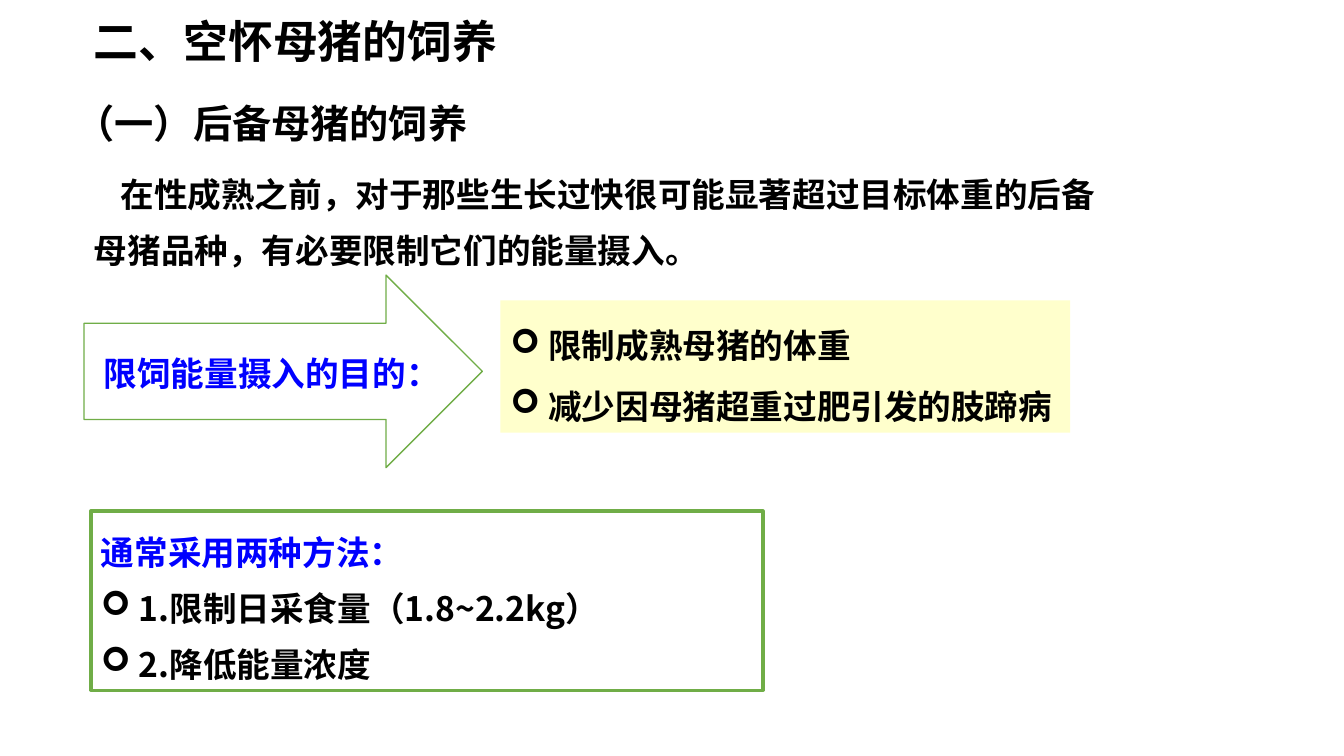
from lxml import etree
from pptx import Presentation
from pptx.dml.color import RGBColor
from pptx.enum.shapes import MSO_SHAPE
from pptx.enum.text import MSO_ANCHOR, MSO_AUTO_SIZE, PP_ALIGN
from pptx.oxml.ns import qn
from pptx.util import Pt

RECTANGLE, RIGHT_ARROW = MSO_SHAPE.RECTANGLE, MSO_SHAPE.RIGHT_ARROW
TOP, LEFT = MSO_ANCHOR.TOP, PP_ALIGN.LEFT
GROW = MSO_AUTO_SIZE.SHAPE_TO_FIT_TEXT

FONT = "Noto Sans CJK SC"
BLACK, BLUE, WHITE = "000000", "0000FF", "FFFFFF"
GREEN, CREAM = "70AD47", "FFFFCC"
BULLET_INDENT = 27


def color(hex_string):
    return RGBColor.from_string(hex_string)


def add_panel(slide, box, fill=WHITE, line=None, line_width=1, preset=RECTANGLE):
    panel = slide.shapes.add_shape(preset, *map(Pt, box))
    panel.shadow.inherit = False
    panel.fill.solid()
    panel.fill.fore_color.rgb = color(fill)
    if line:
        panel.line.color.rgb = color(line)
        panel.line.width = Pt(line_width)
    else:
        panel.line.fill.background()
    return panel


def set_indent(paragraph, margin, first_line):
    properties = paragraph._p.get_or_add_pPr()
    properties.set("marL", str(Pt(margin)))
    properties.set("indent", str(Pt(first_line)))
    return properties


def add_bullet(paragraph):
    properties = set_indent(paragraph, BULLET_INDENT, -BULLET_INDENT)
    etree.SubElement(properties, qn("a:buFont")).set("typeface", "Wingdings")
    etree.SubElement(properties, qn("a:buChar")).set("char", "➢")


def write(holder, lines, size=24, spacing=None, wrap=True):
    """Fill a shape with (text, colour, bulleted) lines."""
    frame = holder.text_frame
    frame.word_wrap = wrap
    frame.auto_size = GROW
    frame.vertical_anchor = TOP
    frame.text = "\n".join(text for text, _, _ in lines)
    for paragraph, (_, ink, bulleted) in zip(frame.paragraphs, lines):
        paragraph.alignment = LEFT
        if spacing:
            paragraph.line_spacing = spacing
        if bulleted:
            add_bullet(paragraph)
        for run in paragraph.runs:
            run.font.size = Pt(size)
            run.font.bold = True
            run.font.color.rgb = color(ink)
            run.font.name = FONT
            east_asian = etree.SubElement(run._r.get_or_add_rPr(), qn("a:ea"))
            east_asian.set("typeface", FONT)
    return frame


def add_heading(slide, box, text, size):
    write(add_panel(slide, box), [(text, BLACK, False)], size, wrap=False)


def add_introduction(slide, box):
    introduction = slide.shapes.add_textbox(*map(Pt, box))
    text = ("在性成熟之前，对于那些生长过快很可能显著超过目标体重的后备"
            "母猪品种，有必要限制它们的能量摄入。")
    frame = write(introduction, [(text, BLACK, False)], spacing=Pt(40))
    set_indent(frame.paragraphs[0], 0, 19)


def add_methods(slide, box):
    methods = add_panel(slide, box, line=GREEN, line_width=2.25)
    write(methods, [("通常采用两种方法：", BLUE, False),
                    ("1.限制日采食量（1.8~2.2kg）", BLACK, True),
                    ("2.降低能量浓度", BLACK, True)], spacing=Pt(40))


def add_purpose(slide, box):
    left, top, width, height = box
    # Benefits to the right of the arrow
    benefits = add_panel(slide, (left + 297.5, top + 18, 407, 94.5), CREAM)
    write(benefits, [("限制成熟母猪的体重", BLACK, True),
                     ("减少因母猪超重过肥引发的肢蹄病", BLACK, True)], spacing=1.5)
    # Arrow and its label
    add_panel(slide, (left, top, 284.5, height), line=GREEN, preset=RIGHT_ARROW)
    label = slide.shapes.add_textbox(Pt(left + 7), Pt(top + 41), Pt(257), Pt(43))
    write(label, [("限饲能量摄入的目的：", BLUE, False)], spacing=Pt(40), wrap=False)


def main():
    deck = Presentation()
    deck.slide_width, deck.slide_height = Pt(960), Pt(540)
    slide = deck.slides.add_slide(deck.slide_layouts[6])
    add_introduction(slide, (60, 109.5, 736.5, 88))
    add_methods(slide, (65, 365, 480, 128))
    add_heading(slide, (47, 67.5, 297.5, 41), "（一）后备母猪的饲养", 28)
    add_purpose(slide, (60, 196.5, 704.5, 137.5))
    add_heading(slide, (60, 6, 306.5, 46), "二、空怀母猪的饲养", 32)
    deck.save("out.pptx")


if __name__ == "__main__":
    main()
